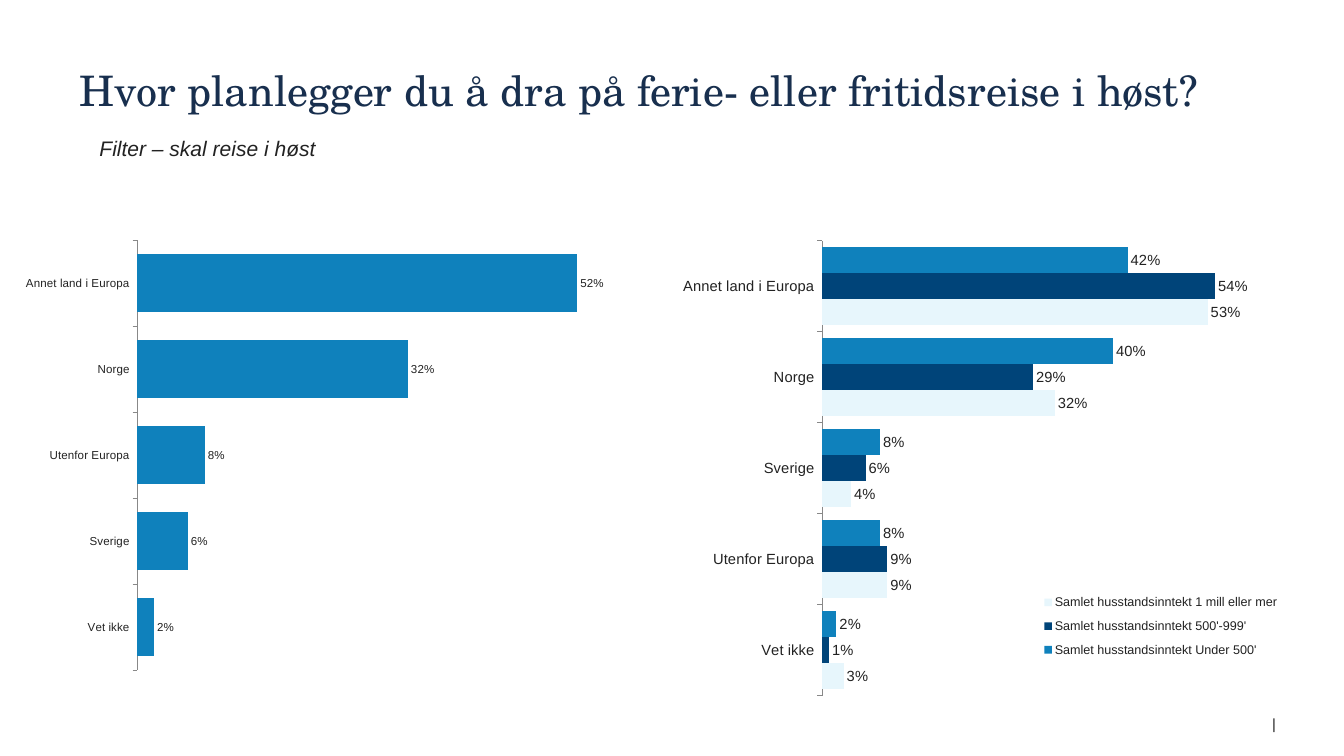
import pptx
import pptx.chart.data
import pptx.dml.color
import pptx.enum.chart
import pptx.enum.text
import pptx.oxml
import pptx.oxml.ns
import pptx.util

SCALE = 12095  # EMU in one px
SANS = "Arial"
SERIF = "TeX Gyre Schola"
INK = "222222"
NAVY = "182F4E"
GREY = "888888"
BLUE = "0F81BC"
DARK = "004479"
PALE = "E7F6FC"

ALL = [("Series 1", BLUE, (0.52, 0.32, 0.08, 0.06, 0.02))]
INCOME = [
    ("Samlet husstandsinntekt Under 500'", BLUE, (0.42, 0.40, 0.08, 0.08, 0.02)),
    ("Samlet husstandsinntekt 500'-999'", DARK, (0.54, 0.29, 0.06, 0.09, 0.01)),
    ("Samlet husstandsinntekt 1 mill eller mer", PALE, (0.53, 0.32, 0.04, 0.09, 0.03)),
]


def px(*sizes):
    return [pptx.util.Emu(size * SCALE) for size in sizes]


def color(code):
    return pptx.dml.color.RGBColor.from_string(code)


def style(font, size, code=INK, face=SANS):
    font.name = face
    font.size = pptx.util.Pt(size)
    font.color.rgb = color(code)


def add_text(slide, box, words, size, code=INK, face=SANS, italic=False, inset=None):
    """Add one line of text; inset is left, top, right, bottom in px."""
    frame = slide.shapes.add_textbox(*px(*box)).text_frame
    frame.word_wrap = True
    if inset:
        (frame.margin_left, frame.margin_top,
         frame.margin_right, frame.margin_bottom) = px(*inset)
    line = frame.paragraphs[0]
    run = line.add_run()
    run.text = words
    style(run.font, size, code, face)
    run.font.italic = italic
    return frame, line


def place(parent, index, area):
    """Give a chart part a fixed area, in fractions of the chart."""
    for old in parent.findall(pptx.oxml.ns.qn("c:layout")):
        parent.remove(old)
    inner = '<c:layoutTarget val="inner"/>' if index == 0 else ""
    modes = '<c:xMode val="edge"/><c:yMode val="edge"/>'
    sides = "".join(f'<c:{side} val="{part}"/>' for side, part in zip("xywh", area))
    parent.insert(index, pptx.oxml.parse_xml(
        f'<c:layout {pptx.oxml.ns.nsdecls("c")}><c:manualLayout>'
        f"{inner}{modes}{sides}</c:manualLayout></c:layout>"))


def add_bars(slide, box, names, groups, size, small, area):
    data = pptx.chart.data.CategoryChartData(number_format="0%")
    data.categories = names
    for name, _, values in groups:
        data.add_series(name, values)
    kind = pptx.enum.chart.XL_CHART_TYPE.BAR_CLUSTERED
    chart = slide.shapes.add_chart(kind, *px(*box), data).chart
    chart.has_title = False
    chart.has_legend = False
    style(chart.font, size)
    place(chart._chartSpace.chart.plotArea, 0, area)

    axis = chart.category_axis
    axis.reverse_order = True
    axis.has_major_gridlines = False
    axis.major_tick_mark = pptx.enum.chart.XL_TICK_MARK.OUTSIDE
    axis.format.line.color.rgb = color(GREY)
    style(axis.tick_labels.font, small)

    scale = chart.value_axis
    scale.minimum_scale, scale.maximum_scale = 0, 0.6
    scale.has_major_gridlines = False
    scale.visible = False

    plot = chart.plots[0]
    plot.gap_width = 50
    plot.overlap = 0
    plot.vary_by_categories = False
    for series, (_, code, _) in zip(plot.series, groups):
        series.invert_if_negative = False
        series.format.fill.solid()
        series.format.fill.fore_color.rgb = color(code)
        labels = series.data_labels
        labels.show_value = True
        labels.number_format = "0%"
        labels.number_format_is_linked = False
        labels.position = pptx.enum.chart.XL_LABEL_POSITION.OUTSIDE_END
        style(labels.font, small)
    return chart


def add_legend(chart, size, area):
    chart.has_legend = True
    legend = chart.legend
    legend.position = pptx.enum.chart.XL_LEGEND_POSITION.RIGHT
    legend.include_in_layout = False
    style(legend.font, size)
    place(legend._element, 1, area)


def main():
    deck = pptx.Presentation()
    deck.slide_width, deck.slide_height = px(1344, 756)
    slide = deck.slides.add_slide(deck.slide_layouts[6])

    _, mark = add_text(slide, (1216, 715, 60, 18), "|", 14, inset=(0, 0, 0, 0))
    mark.alignment = pptx.enum.text.PP_ALIGN.RIGHT

    frame, title = add_text(
        slide, (80, 40, 1183, 146),
        "Hvor planlegger du å dra på ferie- eller fritidsreise i høst?",
        40, NAVY, SERIF, inset=(0, 0, 0, 50))
    frame.vertical_anchor = pptx.enum.text.MSO_ANCHOR.MIDDLE
    title.line_spacing = 1.08

    add_bars(slide, (15, 231, 643, 448),
             ("Annet land i Europa", "Norge", "Utenfor Europa", "Sverige", "Vet ikke"),
             ALL, 11, 11, (0.19, 0.02, 0.79, 0.96))
    add_text(slide, (92, 132, 356, 33), "Filter – skal reise i høst", 20, italic=True)
    chart = add_bars(
        slide, (672, 231, 652, 479),
        ("Annet land i Europa", "Norge", "Sverige", "Utenfor Europa", "Vet ikke"),
        INCOME, 18, 14, (0.23, 0.02, 0.67, 0.95))
    add_legend(chart, 12, (0.56, 0.74, 0.38, 0.17))

    deck.save("out.pptx")


if __name__ == "__main__":
    main()
